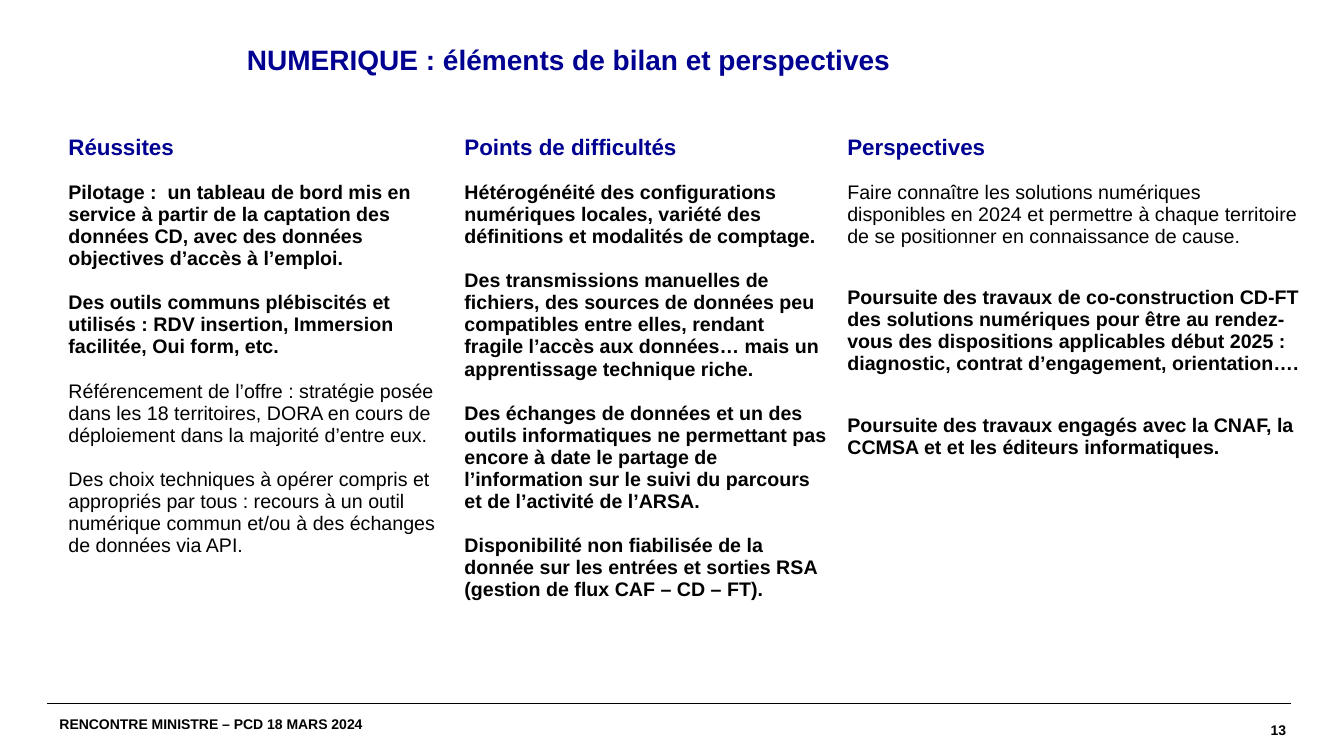
from lxml import etree
from pptx import Presentation
from pptx import util as u
from pptx.dml.color import RGBColor
from pptx.enum import shapes, text
from pptx.oxml import ns

COLOURS = {"ink": "000000", "heading": "000091"}
COLUMNS = [
    ("Réussites", 9.98, 16, [
        ("Pilotage :  un tableau de bord mis en service à partir de la captation des données CD, "
         "avec des données objectives d’accès à l’emploi.", True),
        ("Des outils communs plébiscités et utilisés : RDV insertion, Immersion facilitée, "
         "Oui form, etc.", True),
        ("Référencement de l’offre : stratégie posée dans les 18 territoires, DORA en cours de "
         "déploiement dans la majorité d’entre eux.", False),
        ("Des choix techniques à opérer compris et appropriés par tous : recours à un outil "
         "numérique commun et/ou à des échanges de données via API.", False),
    ]),
    ("Points de difficultés", 9.65, 16, [
        ("Hétérogénéité des configurations numériques locales, variété des définitions et "
         "modalités de comptage.", True),
        ("Des transmissions manuelles de fichiers, des sources de données peu compatibles entre "
         "elles, rendant fragile l’accès aux données… mais un apprentissage technique riche.", True),
        ("Des échanges de données et un des outils informatiques ne permettant pas encore à date "
         "le partage de l’information sur le suivi du parcours et de l’activité de l’ARSA.", True),
        ("Disponibilité non fiabilisée de la donnée sur les entrées et sorties RSA "
         "(gestion de flux CAF – CD – FT).", True),
    ]),
    ("Perspectives", 11.95, 28, [
        ("Faire connaître les solutions numériques disponibles en 2024 et permettre à chaque "
         "territoire de se positionner en connaissance de cause.", False),
        ("Poursuite des travaux de co-construction CD-FT des solutions numériques pour être au "
         "rendez-vous des dispositions applicables début 2025 : diagnostic, contrat "
         "d’engagement, orientation….", True),
        ("Poursuite des travaux engagés avec la CNAF, la CCMSA et et les éditeurs "
         "informatiques.", True),
    ]),
]


class SlideBuilder:
    """Draws styled elements on the current slide."""

    def __init__(self, slide, font="Arial"):
        self.slide = slide
        self.font = font

    def apply(self, target, values):
        for name, value in values.items():
            setattr(target, name, value)

    def add_words(self, para, words, size, colour="ink", bold=True, **layout):
        self.apply(para, layout)
        span = para.add_run()
        span.text = words
        self.apply(span.font, {"name": self.font, "size": u.Pt(size), "bold": bold})
        span.font.color.rgb = RGBColor.from_string(COLOURS[colour])

    def text_box(self, place, words, size, margins, anchor, colour="ink", **layout):
        frame = self.slide.shapes.add_textbox(*map(u.Cm, place)).text_frame
        across, down = map(u.Cm, margins)
        self.apply(frame, {"word_wrap": True, "vertical_anchor": anchor,
                           "margin_left": across, "margin_right": across,
                           "margin_top": down, "margin_bottom": down})
        self.add_words(frame.paragraphs[0], words, size, colour, **layout)

    def rule(self, left, right, top):
        line = self.slide.shapes.add_connector(
            shapes.MSO_CONNECTOR.STRAIGHT, u.Cm(left), u.Cm(top), u.Cm(right), u.Cm(top))
        line.line.width = u.Pt(0.8)
        line.line.color.rgb = RGBColor.from_string(COLOURS["ink"])
        etree.SubElement(line._element.spPr, ns.qn("a:effectLst"))

    def table(self, left, top, heights, columns):
        width = sum(column[1] for column in columns)
        table = self.slide.shapes.add_table(
            len(heights), len(columns), *map(u.Cm, (left, top, width, sum(heights)))).table
        for row, height in zip(table.rows, heights):
            row.height = u.Cm(height)
        for index, (heading, column_width, gap, entries) in enumerate(columns):
            table.columns[index].width = u.Cm(column_width)
            head, body = (table.cell(row, index) for row in range(len(heights)))
            for cell in (head, body):
                cell.fill.background()
            self.add_words(head.text_frame.paragraphs[0], heading, 16, "heading")
            frame = body.text_frame
            for number, (words, bold) in enumerate(entries):
                para = frame.add_paragraph() if number else frame.paragraphs[0]
                self.add_words(para, words, 14, bold=bold,
                               space_before=u.Pt(gap if number else 0))


def main():
    deck = Presentation()
    deck.slide_width, deck.slide_height = u.Cm(33.87), u.Cm(19.05)
    page = SlideBuilder(deck.slides.add_slide(deck.slide_layouts[6]))
    footer_top = 17.73
    for left in (1.19, 1.32):
        page.rule(left, left + 31.22, footer_top)
    page.text_box((27.41, footer_top, 5, 1.32), "13", 10, (0, 0),
                  text.MSO_ANCHOR.MIDDLE, alignment=text.PP_ALIGN.RIGHT)
    page.text_box((1.17, footer_top, 8.76, 1.02), "RENCONTRE MINISTRE – PCD 18 MARS 2024",
                  10, (0.33, 0.18), text.MSO_ANCHOR.MIDDLE)
    page.table(1.47, 3.28, (1.17, 12.93), COLUMNS)
    page.text_box((5.97, 1.04, 27.38, 2.21), "NUMERIQUE : éléments de bilan et perspectives",
                  20, (0.25, 0.13), text.MSO_ANCHOR.TOP, "heading",
                  line_spacing=0.9, space_after=u.Pt(6.7))
    deck.save("out.pptx")


if __name__ == "__main__":
    main()
